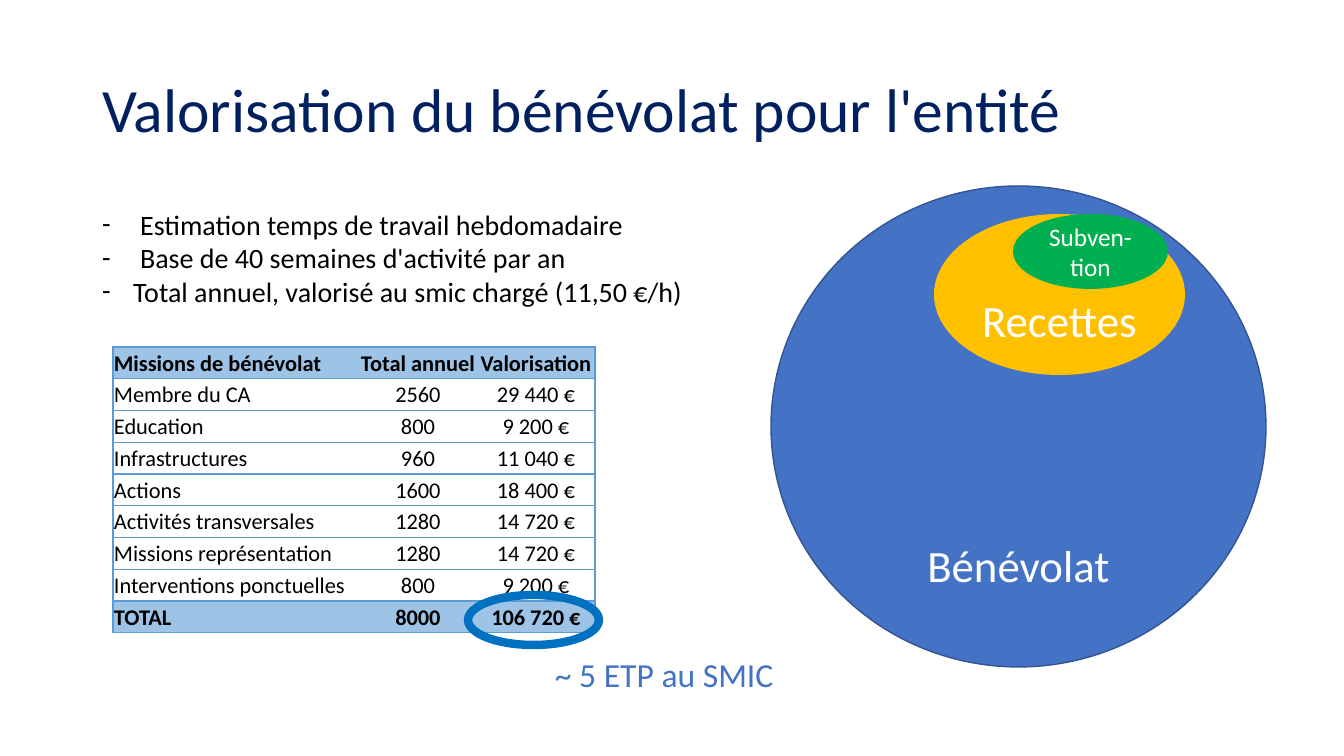
from lxml import etree
from pptx import Presentation
from pptx.dml.color import RGBColor
from pptx.enum.shapes import MSO_SHAPE
from pptx.enum.text import MSO_ANCHOR, MSO_AUTO_SIZE, PP_ALIGN
from pptx.oxml.ns import qn
from pptx.util import Emu, Pt

OVAL = MSO_SHAPE.OVAL
LEFT, CENTER = PP_ALIGN.LEFT, PP_ALIGN.CENTER
TOP, MIDDLE, BOTTOM = MSO_ANCHOR.TOP, MSO_ANCHOR.MIDDLE, MSO_ANCHOR.BOTTOM
FONT = "Calibri"
COLORS = {
    "navy": "002060", "black": "000000", "white": "FFFFFF", "blue": "4472C4",
    "outline": "325491", "amber": "FFC000", "green": "00B050", "ring": "0070C0",
    "band": "9DC3E6", "border": "5B9BD5",
}

TITLE = "Valorisation du bénévolat pour l'entité"
# text, hanging indent
POINTS = [
    ("Estimation temps de travail hebdomadaire", 38),
    ("Base de 40 semaines d'activité par an", 38),
    ("Total annuel, valorisé au smic chargé (11,50 €/h)", 31),
]
MISSIONS = [
    ("Missions de bénévolat", "Total annuel", "Valorisation"),
    ("Membre du CA", "2560", "29 440 €"),
    ("Education", "800", "9 200 €"),
    ("Infrastructures", "960", "11 040 €"),
    ("Actions", "1600", "18 400 €"),
    ("Activités transversales", "1280", "14 720 €"),
    ("Missions représentation", "1280", "14 720 €"),
    ("Interventions ponctuelles", "800", "9 200 €"),
    ("TOTAL", "8000", "106 720 €"),
]
COLUMN_WIDTHS = [246, 118, 118]
TABLE_LEFT, TABLE_TOP, TABLE_HEIGHT = 113, 347, 286
# text, size, anchor, fill, line, line width, bounds
OVALS = [
    ("Bénévolat", 32, BOTTOM, "blue", "outline", 1, (771, 186, 495, 481)),
    ("Recettes", 32, BOTTOM, "amber", None, 0, (934, 214, 251, 161)),
    ("Subven-tion", 18, MIDDLE, "green", None, 0, (1013, 214, 155, 75)),
    ("", 18, MIDDLE, None, "ring", 6, (468, 595, 131, 50)),
]
CONCLUSION = "~ 5 ETP au SMIC"


def px(length):
    return Emu(round(length * 914400 / 100.8))


def rgb(name):
    return RGBColor.from_string(COLORS[name])


def place(shape, left, top, width, height):
    shape.left, shape.top = px(left), px(top)
    shape.width, shape.height = px(width), px(height)


def write(para, text, size, color, align=LEFT, bold=False):
    para.alignment = align
    span = para.add_run()
    span.text = text
    span.font.name, span.font.size, span.font.bold = FONT, Pt(size), bold
    span.font.color.rgb = rgb(color)


def set_frame(frame, anchor):
    frame.word_wrap = True
    frame.auto_size = MSO_AUTO_SIZE.NONE
    frame.vertical_anchor = anchor


def add_dash(para, indent):
    props = para._p.get_or_add_pPr()
    props.set("marL", str(px(indent)))
    props.set("indent", str(-px(indent)))
    etree.SubElement(props, qn("a:buFont"), typeface=FONT)
    etree.SubElement(props, qn("a:buChar")).set("char", "-")


def set_borders(cell, visible):
    props = cell._tc.get_or_add_tcPr()
    for side in ("L", "R", "T", "B"):
        line = etree.SubElement(props, qn("a:ln" + side), w=str(Pt(1)))
        if side in visible:
            fill = etree.SubElement(line, qn("a:solidFill"))
            etree.SubElement(fill, qn("a:srgbClr"), val=COLORS["border"])
        else:
            etree.SubElement(line, qn("a:noFill"))


def add_missions(slide):
    frame = slide.shapes.add_table(
        len(MISSIONS), len(COLUMN_WIDTHS), px(TABLE_LEFT), px(TABLE_TOP),
        px(sum(COLUMN_WIDTHS)), px(TABLE_HEIGHT))
    table = frame.table
    table.first_row = table.horz_banding = False
    for column, width in zip(table.columns, COLUMN_WIDTHS):
        column.width = px(width)
    for r, values in enumerate(MISSIONS):
        table.rows[r].height = px(TABLE_HEIGHT / len(MISSIONS))
        strong = r in (0, len(MISSIONS) - 1)
        for c, value in enumerate(values):
            cell = table.cell(r, c)
            cell.margin_left = cell.margin_right = cell.margin_top = px(1)
            cell.margin_bottom = 0
            cell.vertical_anchor = MIDDLE
            set_borders(cell, "TB" + ("L", "", "R")[c])
            cell.fill.solid()
            cell.fill.fore_color.rgb = rgb("band" if strong else "white")
            write(cell.text_frame.paragraphs[0], value, 16, "black",
                  CENTER if c else LEFT, strong)


def add_oval(slide, text, size, anchor, fill, line, line_width, bounds):
    oval = slide.shapes.add_shape(OVAL, *map(px, bounds))
    oval.shadow.inherit = False
    if fill:
        oval.fill.solid()
        oval.fill.fore_color.rgb = rgb(fill)
    else:
        oval.fill.background()
    if line:
        oval.line.color.rgb = rgb(line)
        oval.line.width = Pt(line_width)
    else:
        oval.line.fill.background()
    if text:
        set_frame(oval.text_frame, anchor)
        write(oval.text_frame.paragraphs[0], text, size, "white", CENTER)


def main():
    deck = Presentation()
    deck.slide_width, deck.slide_height = px(1344), px(756)
    slide = deck.slides.add_slide(deck.slide_layouts[1])

    title, body = slide.placeholders
    place(title, 92, 40, 1159, 146)
    set_frame(title.text_frame, MIDDLE)
    title.text_frame.paragraphs[0].line_spacing = 0.9
    write(title.text_frame.paragraphs[0], TITLE, 44, "navy")

    place(body, 92, 202, 721, 112)
    set_frame(body.text_frame, TOP)
    for i, (text, indent) in enumerate(POINTS):
        frame = body.text_frame
        para = frame.add_paragraph() if i else frame.paragraphs[0]
        para.space_before = Pt(0)
        add_dash(para, indent)
        write(para, text, 20, "black")

    add_missions(slide)
    for oval in OVALS:
        add_oval(slide, *oval)

    box = slide.shapes.add_textbox(px(545), px(649), px(268), px(50))
    set_frame(box.text_frame, TOP)
    write(box.text_frame.paragraphs[0], CONCLUSION, 24, "blue")
    deck.save("out.pptx")


if __name__ == "__main__":
    main()
